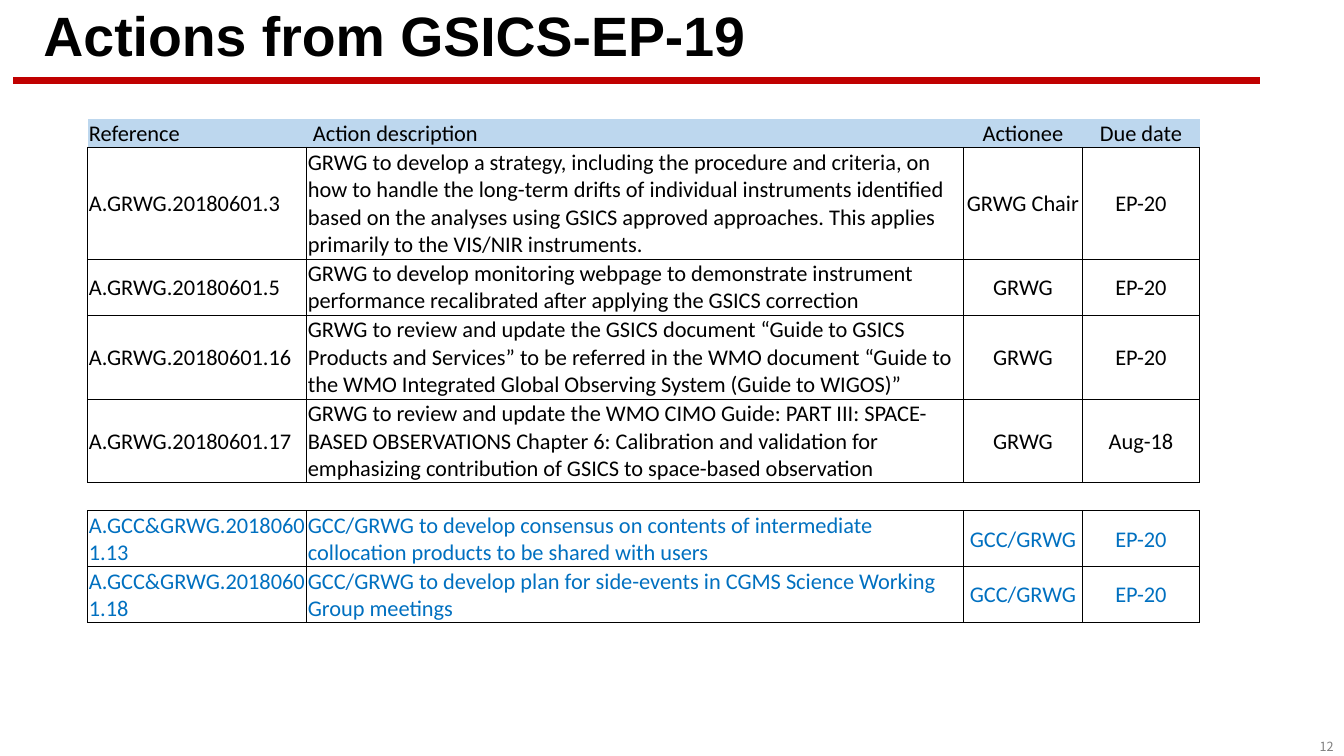
from lxml.etree import SubElement
from pptx import Presentation
from pptx.dml.color import RGBColor
from pptx.enum.shapes import MSO_CONNECTOR
from pptx.enum.text import MSO_ANCHOR, MSO_AUTO_SIZE, PP_ALIGN
from pptx.oxml.ns import qn
from pptx.util import Cm, Pt

TITLE = "Actions from GSICS-EP-19"
PAGE = "12"
HEADER = ("Reference", " Action description", "Actionee", "Due date")
GRWG_ACTIONS = [
    ("A.GRWG.20180601.3",
     "GRWG to develop a strategy, including the procedure and criteria, on how to handle "
     "the long-term drifts of individual instruments identified based on the analyses using "
     "GSICS approved approaches. This applies primarily to the VIS/NIR instruments.",
     "GRWG Chair", "EP-20"),
    ("A.GRWG.20180601.5",
     "GRWG to develop monitoring webpage to demonstrate instrument performance recalibrated "
     "after applying the GSICS correction",
     "GRWG", "EP-20"),
    ("A.GRWG.20180601.16",
     "GRWG to review and update the GSICS document “Guide to GSICS Products and Services” "
     "to be referred in the WMO document “Guide to the WMO Integrated Global Observing "
     "System (Guide to WIGOS)”",
     "GRWG", "EP-20"),
    ("A.GRWG.20180601.17",
     "GRWG to review and update the WMO CIMO Guide: PART III: SPACE-BASED OBSERVATIONS "
     "Chapter 6: Calibration and validation for emphasizing contribution of GSICS to "
     "space-based observation",
     "GRWG", "Aug-18"),
]
JOINT_ACTIONS = [
    ("A.GCC&GRWG.20180601.13",
     "GCC/GRWG to develop consensus on contents of intermediate collocation products to be "
     "shared with users",
     "GCC/GRWG", "EP-20"),
    ("A.GCC&GRWG.20180601.18",
     "GCC/GRWG to develop plan for side-events in CGMS Science Working Group meetings",
     "GCC/GRWG", "EP-20"),
]
GAP = ("",) * 4

# Row kind, cell texts and number of text lines
ROWS = ([("header", HEADER, 1)]
        + [("grwg", a, n) for a, n in zip(GRWG_ACTIONS, (4, 2, 3, 3))]
        + [("gap", GAP, 1)]
        + [("joint", a, 2) for a in JOINT_ACTIONS])
COL_WIDTHS = (5.52, 16.55, 3.0, 2.95)
COL_ALIGN = (PP_ALIGN.LEFT, PP_ALIGN.LEFT, PP_ALIGN.CENTER, PP_ALIGN.CENTER)
LINE_HEIGHT = 0.705
EDGES = {"header": "B", "grwg": "LRTB", "gap": "TB", "joint": "LRTB"}
NO_STYLE = "{2D5ABB26-0587-4C30-8999-92F81FD0307C}"

BLACK, RED, GREY = "000000", "C00000", "808080"
THEME = {
    "title": {"name": "Arial", "size": Pt(39.6), "bold": True, "color": BLACK},
    "header": {"name": "Calibri", "size": Pt(16), "bold": False, "color": BLACK},
    "grwg": {"name": "Calibri", "size": Pt(16), "bold": False, "color": BLACK},
    "joint": {"name": "Calibri", "size": Pt(16), "bold": False, "color": "0070C0"},
    "page": {"name": "Noto Sans CJK KR", "size": Pt(9), "bold": False, "color": GREY},
    "header_fill": "BDD7EE",
    "rule": Pt(4.5),
    "border": Pt(0.5),
}


def set_all(obj, **values):
    for key, value in values.items():
        setattr(obj, key, value)


def write(tf, text, style, align):
    p = tf.paragraphs[0]
    p.alignment = align
    r = p.add_run()
    r.text = text
    values = dict(THEME[style])
    r.font.color.rgb = RGBColor.from_string(values.pop("color"))
    set_all(r.font, **values)
    return p


def add_borders(cell, edges):
    """Draw the named edges of a cell; borders go before its fill in the XML."""
    tc_pr = cell._tc.get_or_add_tcPr()
    for i, edge in enumerate(edges):
        ln = SubElement(tc_pr, qn(f"a:ln{edge}"), w=str(THEME["border"]))
        fill = SubElement(ln, qn("a:solidFill"))
        SubElement(fill, qn("a:srgbClr"), val=BLACK)
        tc_pr.insert(i, ln)


def add_title(slide):
    sp = slide.shapes.title
    set_all(sp, left=Cm(0.84), top=Cm(0.2), width=Cm(29.21), height=Cm(1.52))
    tf = sp.text_frame
    set_all(tf, vertical_anchor=MSO_ANCHOR.MIDDLE, auto_size=MSO_AUTO_SIZE.NONE,
            word_wrap=True)
    write(tf, TITLE, "title", PP_ALIGN.LEFT).line_spacing = 0.9


def add_rule(slide):
    y = Cm(2.03)
    rule = slide.shapes.add_connector(MSO_CONNECTOR.STRAIGHT, Cm(0.33), y, Cm(31.75), y)
    rule.line.color.rgb = RGBColor.from_string(RED)
    rule.line.width = THEME["rule"]
    SubElement(rule._element.spPr, qn("a:effectLst"))


def add_actions(slide):
    lines = sum(n for _, _, n in ROWS)
    frame = slide.shapes.add_table(len(ROWS), len(COL_WIDTHS), Cm(2.21), Cm(3.0),
                                   Cm(sum(COL_WIDTHS)), Cm(lines * LINE_HEIGHT))
    table = frame.table
    set_all(table, first_row=False, horz_banding=False)
    table._tbl.tblPr.find(qn("a:tableStyleId")).text = NO_STYLE
    for col, width in zip(table.columns, COL_WIDTHS):
        col.width = Cm(width)
    for row, (kind, texts, n) in zip(table.rows, ROWS):
        row.height = Cm(n * LINE_HEIGHT)
        for cell, text, align in zip(row.cells, texts, COL_ALIGN):
            set_all(cell, margin_left=Cm(0.03), margin_right=Cm(0.03), margin_top=Cm(0.03),
                    margin_bottom=0, vertical_anchor=MSO_ANCHOR.MIDDLE)
            if kind == "header":
                cell.fill.solid()
                cell.fill.fore_color.rgb = RGBColor.from_string(THEME["header_fill"])
            else:
                cell.fill.background()
            add_borders(cell, EDGES[kind])
            if text:
                write(cell.text_frame, text, kind, align)
            else:
                end = SubElement(cell.text_frame.paragraphs[0]._p, qn("a:endParaRPr"))
                end.set("sz", "1200")


def add_page_number(slide):
    sp = slide.shapes.add_textbox(Cm(30.96), Cm(18.49), Cm(2.9), Cm(0.56))
    tf = sp.text_frame
    set_all(tf, word_wrap=True, vertical_anchor=MSO_ANCHOR.TOP)
    write(tf, PAGE, "page", PP_ALIGN.RIGHT)


def main():
    prs = Presentation()
    set_all(prs, slide_width=Cm(33.87), slide_height=Cm(19.05))
    slide = prs.slides.add_slide(prs.slide_layouts[5])
    add_rule(slide)
    add_page_number(slide)
    add_title(slide)
    add_actions(slide)
    prs.save("out.pptx")


if __name__ == "__main__":
    main()
